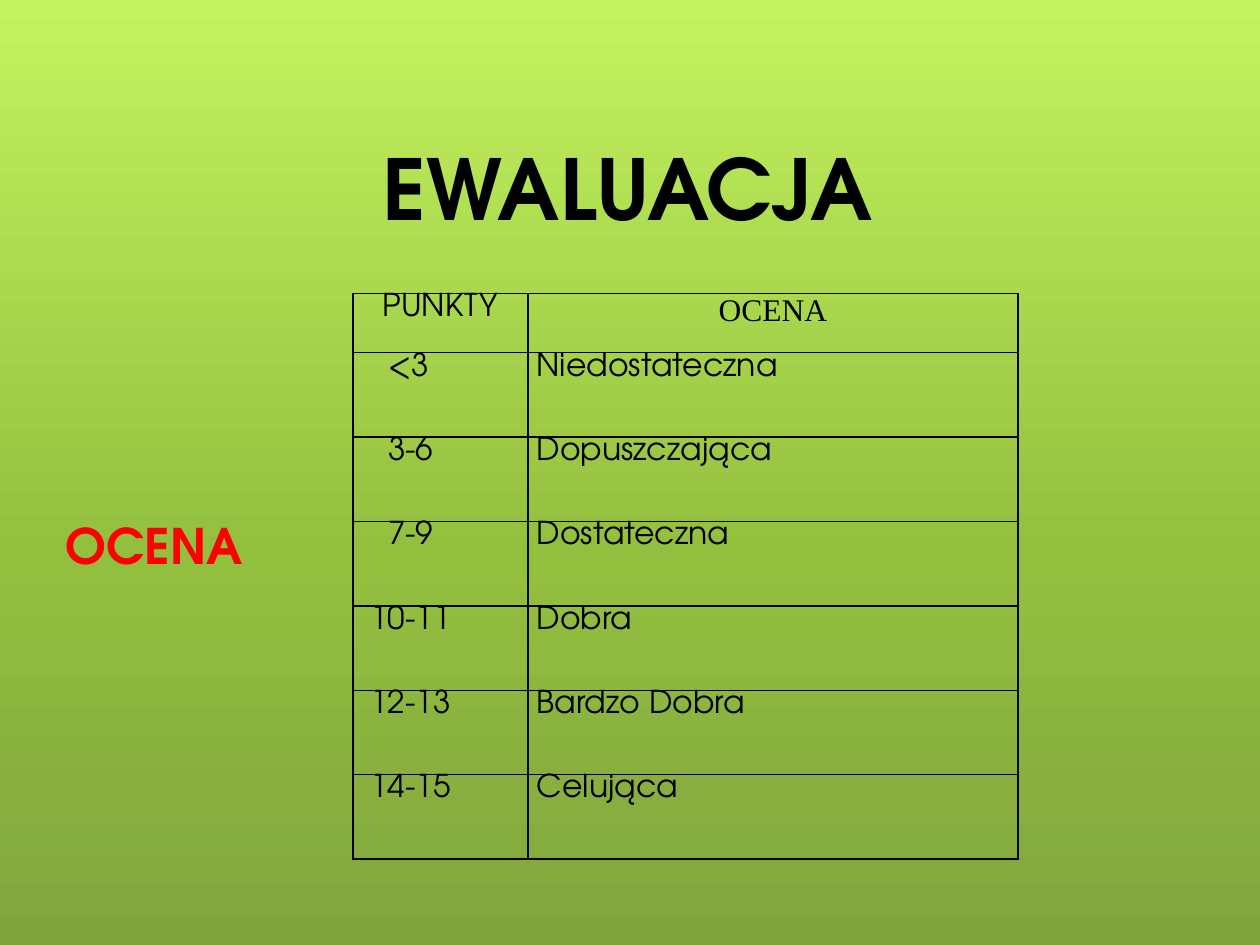
from copy import deepcopy
from dataclasses import dataclass

from lxml.etree import SubElement
from pptx import Presentation
from pptx.dml.color import RGBColor as RGB
from pptx.enum.text import MSO_ANCHOR as Anchor, PP_ALIGN as Align
from pptx.oxml.ns import qn
from pptx.util import Inches, Pt


@dataclass(frozen=True)
class Theme:
    font: str = "TeX Gyre Adventor"
    serif: str = "Times New Roman"
    ink: str = "000000"
    accent: str = "FF0000"
    gradient: tuple = ((0, "C3F35F"), (0.59, "93BF3F"), (1, "81A53E"))
    title_size: int = 48
    label_size: int = 28
    table_size: int = 18
    border_width: int = 1


THEME = Theme()
CELL_INSET = 0.07
HEADER = ("PUNKTY", "OCENA")
# points, grade, extra indent of the points
GRADES = (
    ("<3", "Niedostateczna", 0.21),
    ("3-6", "Dopuszczająca", 0.21),
    ("7-9", "Dostateczna", 0.21),
    ("10-11", "Dobra", 0.07),
    ("12-13", "Bardzo Dobra", 0.07),
    ("14-15", "Celująca", 0.07),
)


def paint_background(slide):
    fill = slide.background.fill
    fill.gradient()
    fill.gradient_angle = 270  # counter-clockwise, so top to bottom
    stop_list = slide.element.find(".//" + qn("a:gsLst"))
    stop_list.append(deepcopy(stop_list[-1]))
    for stop, (position, color) in zip(fill.gradient_stops, THEME.gradient):
        stop.position = position
        stop.color.rgb = RGB.from_string(color)


def write(frame, text, *, size, font=THEME.font, color=THEME.ink,
          bold=False, align=Align.LEFT):
    paragraph = frame.paragraphs[0]
    paragraph.alignment = align
    run = paragraph.add_run()
    run.text = text
    run.font.name = font
    run.font.size = Pt(size)
    run.font.bold = bold
    run.font.color.rgb = RGB.from_string(color)


def add_text(slide, text, left, top, width, height, *, anchor=Anchor.TOP,
             inset_left=0.1, inset_top=0.05, **text_format):
    box = slide.shapes.add_textbox(
        Inches(left), Inches(top), Inches(width), Inches(height))
    frame = box.text_frame
    frame.word_wrap = True
    frame.vertical_anchor = anchor
    frame.margin_left = Inches(inset_left)
    frame.margin_top = Inches(inset_top)
    write(frame, text, **text_format)


def draw_borders(cell):
    properties = cell._tc.get_or_add_tcPr()
    for position, side in enumerate(("a:lnL", "a:lnR", "a:lnT", "a:lnB")):
        line = properties.makeelement(
            qn(side), {"w": str(Pt(THEME.border_width))})
        solid = SubElement(line, qn("a:solidFill"))
        SubElement(solid, qn("a:srgbClr"), val=THEME.ink)
        properties.insert(position, line)


def fill_cell(cell, text, indent=0, **text_format):
    cell.margin_left = Inches(CELL_INSET + indent)
    cell.margin_right = Inches(CELL_INSET)
    cell.margin_top = cell.margin_bottom = 0
    cell.fill.background()
    draw_borders(cell)
    write(cell.text_frame, text, size=THEME.table_size, **text_format)


def add_grade_table(slide):
    table = slide.shapes.add_table(
        len(GRADES) + 1, len(HEADER),
        Inches(2.8), Inches(2.33), Inches(5.28), Inches(4.49)).table
    table.first_row = table.horz_banding = False
    for column, width in zip(table.columns, (1.39, 3.89)):
        column.width = Inches(width)
    for index, row in enumerate(table.rows):
        row.height = Inches(0.67 if index else 0.47)

    for column, (text, font) in enumerate(
            zip(HEADER, (THEME.font, THEME.serif))):
        fill_cell(table.cell(0, column), text, font=font, align=Align.CENTER)
    for row, (points, grade, indent) in enumerate(GRADES, start=1):
        fill_cell(table.cell(row, 0), points, indent)
        fill_cell(table.cell(row, 1), grade)


def main():
    deck = Presentation()
    deck.slide_width, deck.slide_height = Inches(10), Inches(7.5)
    slide = deck.slides.add_slide(deck.slide_layouts[6])
    paint_background(slide)
    add_text(slide, "EWALUACJA", 1.14, 0.68, 7.68, 1.25, anchor=Anchor.BOTTOM,
             size=THEME.title_size, bold=True, align=Align.CENTER)
    add_text(slide, "OCENA", 0.35, 2.54, 8.2, 3.84,
             inset_left=0.17, inset_top=1.55,
             size=THEME.label_size, color=THEME.accent, bold=True)
    add_grade_table(slide)
    deck.save("out.pptx")


if __name__ == "__main__":
    main()
